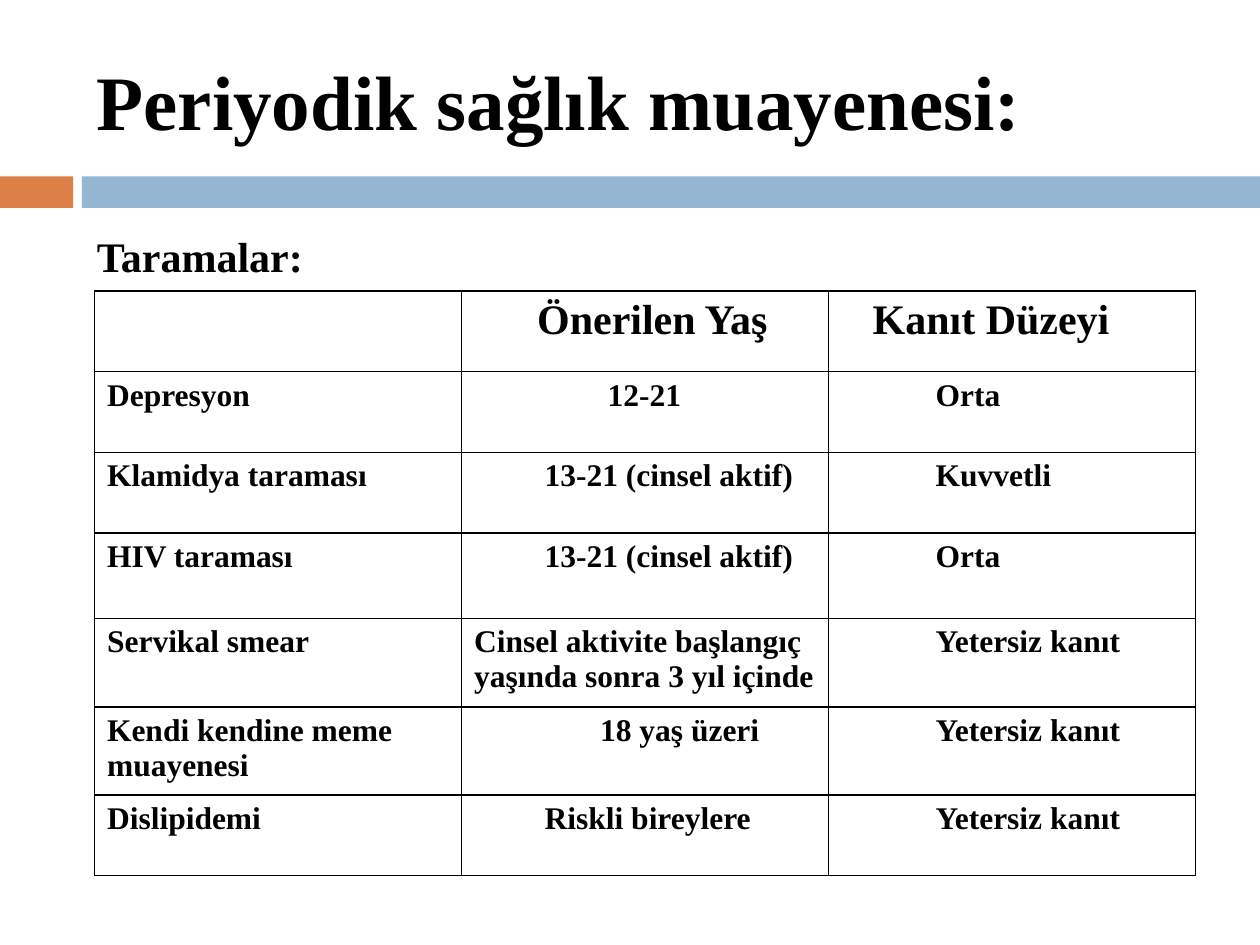
from dataclasses import dataclass

from lxml.etree import SubElement
from pptx import Presentation
from pptx.dml.color import RGBColor
from pptx.enum.shapes import MSO_SHAPE
from pptx.enum.text import MSO_ANCHOR
from pptx.oxml.ns import qn
from pptx.util import Inches, Pt


@dataclass(frozen=True)
class Theme:
    font: str = "Times New Roman"
    ink: str = "000000"
    accent: str = "DD8047"
    band: str = "94B6D2"
    title: int = 44
    heading: int = 24
    body: int = 18
    border: int = 1


@dataclass(frozen=True)
class Box:
    left: float
    top: float
    width: float
    height: float

    def emu(self):
        return [Inches(side) for side in (self.left, self.top, self.width, self.height)]

    def columns(self, start, span, count):
        unit = self.width / count
        return Box(self.left + start * unit, self.top, span * unit, self.height)


THEME = Theme()
PAGE = Box(0, 0, 10, 7.5)
CELL_MARGIN = 0.1
ROW_HEIGHTS = [0.64, 0.64, 0.64, 0.68, 0.66, 0.68, 0.64]
HEADER = [("", 0), ("Önerilen Yaş", 0.5), ("Kanıt Düzeyi", 0.25)]
SCREENINGS = [
    ("Depresyon", "12-21", 1.06, "Orta"),
    ("Klamidya taraması", "13-21 (cinsel aktif)", 0.56, "Kuvvetli"),
    ("HIV taraması", "13-21 (cinsel aktif)", 0.56, "Orta"),
    ("Servikal smear", "Cinsel aktivite başlangıç yaşında sonra 3 yıl içinde", 0, "Yetersiz kanıt"),
    ("Kendi kendine meme muayenesi", "18 yaş üzeri", 1, "Yetersiz kanıt"),
    ("Dislipidemi", "Riskli bireylere", 0.56, "Yetersiz kanıt"),
]
EVIDENCE_INDENT = 0.75


def write(frame, words, size):
    run = frame.paragraphs[0].add_run()
    run.text = words
    run.font.name = THEME.font
    run.font.size = Pt(size)
    run.font.bold = True
    run.font.color.rgb = RGBColor.from_string(THEME.ink)


def add_label(slide, box, words, size):
    frame = slide.shapes.add_textbox(*box.emu()).text_frame
    frame.word_wrap = True
    frame.vertical_anchor = MSO_ANCHOR.MIDDLE
    write(frame, words, size)


def add_divider(slide, box):
    for start, span, colour in ((0, 5.8, THEME.accent), (6.5, 93.5, THEME.band)):
        bar = slide.shapes.add_shape(MSO_SHAPE.RECTANGLE, *box.columns(start, span, 100).emu())
        bar.shadow.inherit = False
        bar.fill.solid()
        bar.fill.fore_color.rgb = RGBColor.from_string(colour)
        bar.line.fill.background()


def draw_borders(cell):
    properties = cell._tc.get_or_add_tcPr()
    for side in ("a:lnL", "a:lnR", "a:lnT", "a:lnB"):
        line = SubElement(properties, qn(side), w=str(Pt(THEME.border)))
        fill = SubElement(line, qn("a:solidFill"))
        SubElement(fill, qn("a:srgbClr"), val=THEME.ink)


def fill_cell(cell, words, indent, size):
    draw_borders(cell)
    cell.fill.background()
    cell.margin_left = Inches(CELL_MARGIN + indent)
    if words:
        write(cell.text_frame, words, size)


def add_screening_table(slide, box):
    table = slide.shapes.add_table(len(ROW_HEIGHTS), len(HEADER), *box.emu()).table
    table.first_row = False
    table.horz_banding = False
    for column in table.columns:
        column.width = Inches(box.width / len(HEADER))
    for row, height in zip(table.rows, ROW_HEIGHTS):
        row.height = Inches(box.height * height / sum(ROW_HEIGHTS))
    for column, (words, indent) in enumerate(HEADER):
        fill_cell(table.cell(0, column), words, indent, THEME.heading)
    for row, (screening, age, age_indent, evidence) in enumerate(SCREENINGS, 1):
        entries = ((screening, 0), (age, age_indent), (evidence, EVIDENCE_INDENT))
        for column, (words, indent) in enumerate(entries):
            fill_cell(table.cell(row, column), words, indent, THEME.body)


def build_slide(slide, page):
    add_divider(slide, Box(page.left, 1.4, page.width, 0.25))
    add_label(slide, Box(0.67, 0.25, 8.92, 1.08), "Periyodik sağlık muayenesi:", THEME.title)
    add_screening_table(slide, Box(0.75, 2.31, 8.74, sum(ROW_HEIGHTS)))
    add_label(slide, Box(0.67, 1.78, 2.28, 0.5), "Taramalar:", THEME.heading)


def main():
    deck = Presentation()
    deck.slide_width = Inches(PAGE.width)
    deck.slide_height = Inches(PAGE.height)
    build_slide(deck.slides.add_slide(deck.slide_layouts[6]), PAGE)
    deck.save("out.pptx")


if __name__ == "__main__":
    main()
